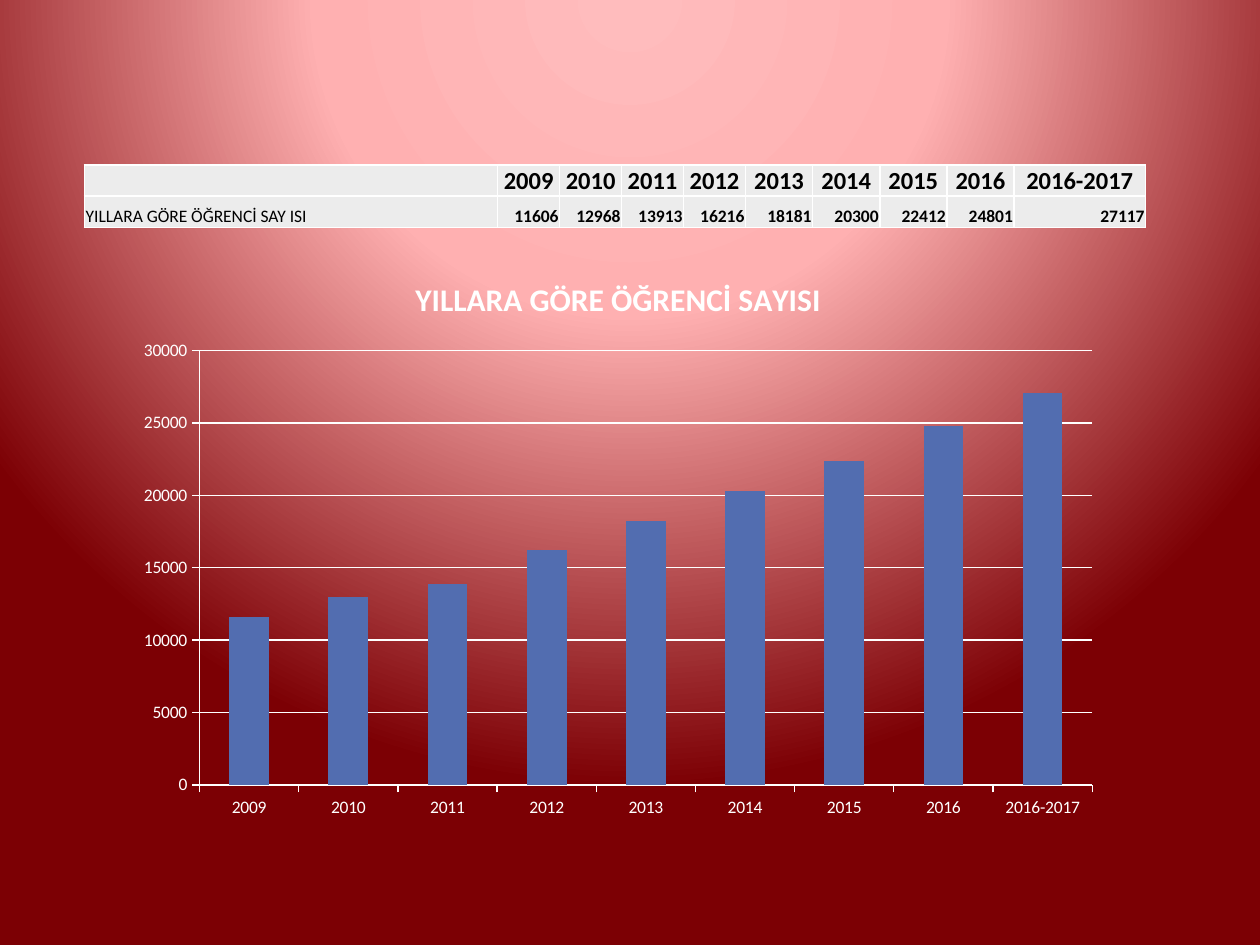
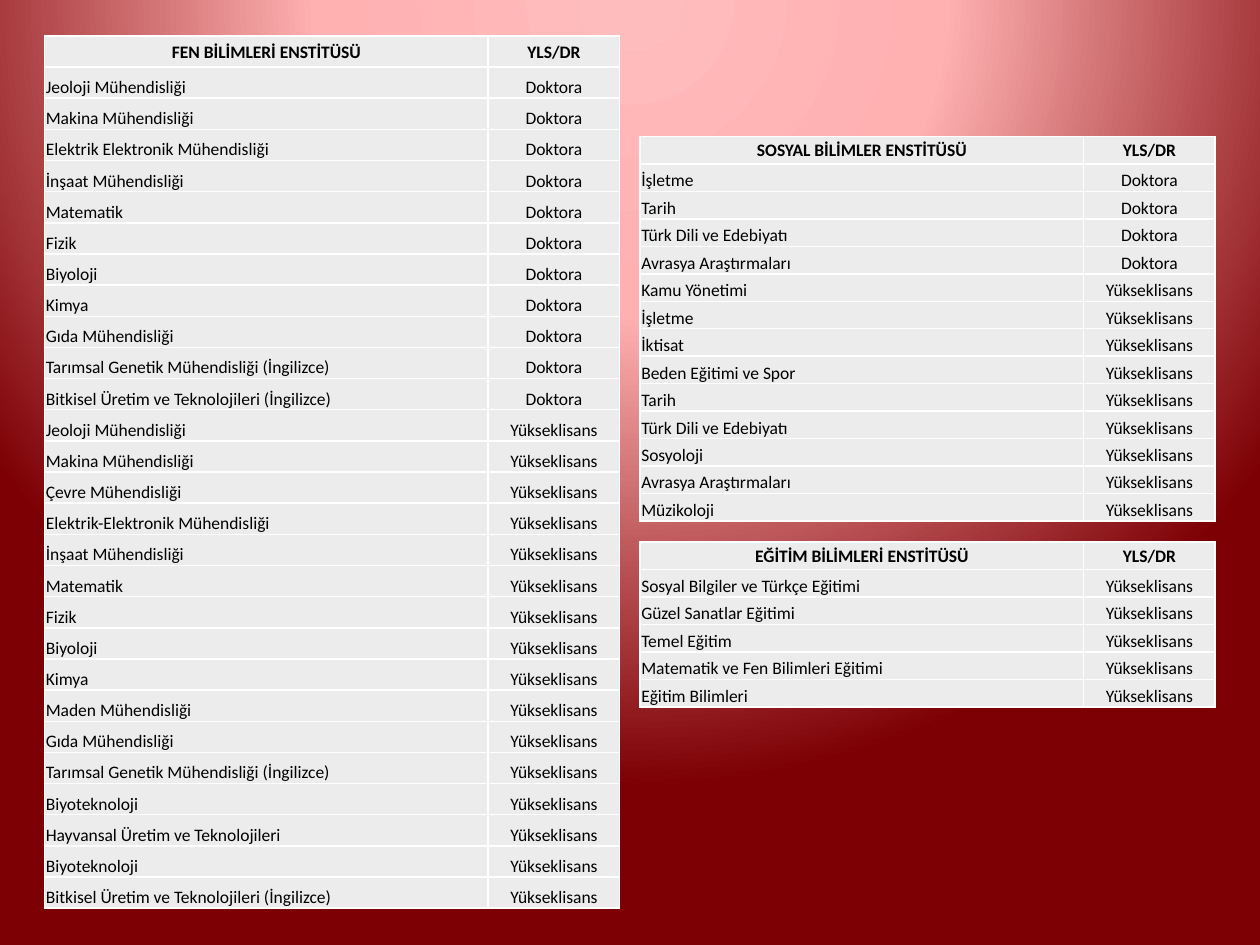
from dataclasses import dataclass

from lxml import etree
from pptx import Presentation, util as u
from pptx.chart.data import CategoryChartData
from pptx.dml.color import RGBColor
from pptx.enum import chart as ch, text as tx
from pptx.oxml import ns, parse_xml

FONT = "Calibri"
WHITE, BLACK, CELL_GREY, BAR_BLUE = "FFFFFF", "000000", "ECECEC", "526DB0"
BACKDROP = ((0, "FFBCBD"), (40, "FFB0B1"), (100, "7C0004"))
SLIDE_W, SLIDE_H = u.Inches(10), u.Inches(7.5)
LEFT, CENTER, RIGHT = tx.PP_ALIGN.LEFT, tx.PP_ALIGN.CENTER, tx.PP_ALIGN.RIGHT
MIDDLE, BOTTOM = tx.MSO_ANCHOR.MIDDLE, tx.MSO_ANCHOR.BOTTOM


@dataclass(frozen=True)
class CellStyle:
    align: tx.PP_ALIGN = LEFT
    size: int = 10
    bold: bool = False
    anchor: tx.MSO_ANCHOR = BOTTOM


@dataclass(frozen=True)
class Grid:
    """Position, column widths and row height in percent of the slide."""
    left: float
    top: float
    columns: tuple
    row: float


@dataclass(frozen=True)
class Institute:
    name: str
    doctorates: tuple
    masters: tuple
    grid: Grid


# Content
STUDENTS = {
    "2009": 11606, "2010": 12968, "2011": 13913, "2012": 16216, "2013": 18181,
    "2014": 20300, "2015": 22412, "2016": 24801, "2016-2017": 27117,
}
CHART_TITLE = "YILLARA GÖRE ÖĞRENCİ SAYISI"
ROW_LABEL = "YILLARA GÖRE ÖĞRENCİ SAY ISI"
YEAR_GRID = Grid(6.7, 17.47, (32.8, *[4.92] * 4, *[5.33] * 4, 10.45), 3.3)

PROGRAMME_COLUMNS = (35.2, 10.45)
GENETICS = "Tarımsal Genetik Mühendisliği (İngilizce)"
CROPS = "Bitkisel Üretim ve Teknolojileri (İngilizce)"
INSTITUTES = (
    Institute(
        "FEN BİLİMLERİ ENSTİTÜSÜ",
        ("Jeoloji Mühendisliği", "Makina Mühendisliği",
         "Elektrik Elektronik Mühendisliği", "İnşaat Mühendisliği", "Matematik",
         "Fizik", "Biyoloji", "Kimya", "Gıda Mühendisliği", GENETICS, CROPS),
        ("Jeoloji Mühendisliği", "Makina Mühendisliği", "Çevre Mühendisliği",
         "Elektrik-Elektronik Mühendisliği", "İnşaat Mühendisliği", "Matematik",
         "Fizik", "Biyoloji", "Kimya", "Maden Mühendisliği", "Gıda Mühendisliği",
         GENETICS, "Biyoteknoloji", "Hayvansal Üretim ve Teknolojileri",
         "Biyoteknoloji", CROPS),
        Grid(3.54, 3.8, PROGRAMME_COLUMNS, 3.3)),
    Institute(
        "SOSYAL BİLİMLER ENSTİTÜSÜ",
        ("İşletme", "Tarih", "Türk Dili ve Edebiyatı", "Avrasya Araştırmaları"),
        ("Kamu Yönetimi", "İşletme", "İktisat", "Beden Eğitimi ve Spor", "Tarih",
         "Türk Dili ve Edebiyatı", "Sosyoloji", "Avrasya Araştırmaları",
         "Müzikoloji"),
        Grid(50.8, 14.43, PROGRAMME_COLUMNS, 2.91)),
    Institute(
        "EĞİTİM BİLİMLERİ ENSTİTÜSÜ",
        (),
        ("Sosyal Bilgiler ve Türkçe Eğitimi", "Güzel Sanatlar Eğitimi",
         "Temel Eğitim", "Matematik ve Fen Bilimleri Eğitimi", "Eğitim Bilimleri"),
        Grid(50.8, 57.37, PROGRAMME_COLUMNS, 2.91)),
)


def across(percent: float) -> int:
    return round(SLIDE_W * percent / 100)


def down(percent: float) -> int:
    return round(SLIDE_H * percent / 100)


def rgb(hex_colour: str) -> RGBColor:
    return RGBColor.from_string(hex_colour)


def set_font(font, size: int, colour: str, bold: bool = False) -> None:
    font.name, font.size, font.bold = FONT, u.Pt(size), bold
    font.color.rgb = rgb(colour)


# Shared background: a glow from above the slide
def paint_backdrop(master) -> None:
    master.background.fill.gradient()
    gradient = master.element.xpath(".//p:bgPr/a:gradFill")[0]
    stops = "".join(f'<a:gs pos="{pos * 1000}"><a:srgbClr val="{colour}"/></a:gs>'
                    for pos, colour in BACKDROP)
    glow = parse_xml(
        f'<a:gradFill {ns.nsdecls("a")} rotWithShape="1"><a:gsLst>{stops}</a:gsLst>'
        '<a:path path="circle"><a:fillToRect l="50000" t="-80000" r="50000" '
        'b="180000"/></a:path></a:gradFill>')
    gradient.getparent().replace(gradient, glow)


# Tables
def add_borders(cell) -> None:
    properties = cell._tc.get_or_add_tcPr()
    for position, side in enumerate("LRTB"):
        line = etree.Element(ns.qn(f"a:ln{side}"), w=str(u.Pt(1)))
        fill = etree.SubElement(line, ns.qn("a:solidFill"))
        etree.SubElement(fill, ns.qn("a:srgbClr"), val=WHITE)
        properties.insert(position, line)


def fill_cell(cell, content: str, style: CellStyle) -> None:
    cell.fill.solid()
    cell.fill.fore_color.rgb = rgb(CELL_GREY)
    add_borders(cell)
    cell.margin_left = cell.margin_right = cell.margin_top = u.Inches(0.01)
    cell.margin_bottom = 0
    cell.vertical_anchor = style.anchor
    cell.text = content
    paragraph = cell.text_frame.paragraphs[0]
    paragraph.alignment = style.align
    set_font(paragraph.font, style.size, BLACK, style.bold)


def draw_table(slide, grid: Grid, rows: list, styles: list) -> None:
    """Each row of styles pairs with a row of text: first column, then the rest."""
    table = slide.shapes.add_table(
        len(rows), len(grid.columns), across(grid.left), down(grid.top),
        across(sum(grid.columns)), down(grid.row * len(rows))).table
    table.first_row = table.horz_banding = False
    for column, width in zip(table.columns, grid.columns):
        column.width = across(width)
    for table_row, contents, (first, rest) in zip(table.rows, rows, styles):
        table_row.height = down(grid.row)
        for index, (cell, content) in enumerate(zip(table_row.cells, contents)):
            fill_cell(cell, content, rest if index else first)


def draw_institute(slide, institute: Institute) -> None:
    rows = [(institute.name, "YLS/DR")]
    rows += [(name, "Doktora") for name in institute.doctorates]
    rows += [(name, "Yükseklisans") for name in institute.masters]
    heading = CellStyle(CENTER, bold=True, anchor=MIDDLE)
    body = (CellStyle(), CellStyle(CENTER))
    draw_table(slide, institute.grid, rows,
               [(heading, heading)] + [body] * (len(rows) - 1))


# Chart, with the counts rounded to hundreds
def draw_student_chart(slide) -> None:
    data = CategoryChartData()
    data.categories = list(STUDENTS)
    data.add_series(CHART_TITLE, [round(count, -2) for count in STUDENTS.values()])
    chart = slide.shapes.add_chart(
        ch.XL_CHART_TYPE.COLUMN_CLUSTERED, across(9.85), down(26.88),
        across(78.4), down(60.8), data).chart
    set_font(chart.font, 10, WHITE)
    chart.has_legend = False
    chart.has_title = True
    title = chart.chart_title.text_frame
    title.text = CHART_TITLE
    set_font(title.paragraphs[0].font, 18, WHITE, bold=True)

    plot = chart.plots[0]
    plot.gap_width, plot.vary_by_categories = 150, False
    bars = plot.series[0].format.fill
    bars.solid()
    bars.fore_color.rgb = rgb(BAR_BLUE)

    values = chart.value_axis
    values.minimum_scale, values.maximum_scale, values.major_unit = 0, 30000, 5000
    values.has_major_gridlines = True
    for axis in (chart.category_axis, values):
        axis.major_tick_mark = ch.XL_TICK_MARK.OUTSIDE
    for part in (chart.category_axis, values, values.major_gridlines):
        part.format.line.color.rgb = rgb(WHITE)
        part.format.line.width = u.Pt(0.75)


def main() -> None:
    deck = Presentation()
    deck.slide_width, deck.slide_height = SLIDE_W, SLIDE_H
    paint_backdrop(deck.slide_master)
    blank = deck.slide_layouts.get_by_name("Blank")

    # Students by year
    students = deck.slides.add_slide(blank)
    year = CellStyle(CENTER, 14, True)
    draw_table(students, YEAR_GRID,
               [("", *STUDENTS), (ROW_LABEL, *map(str, STUDENTS.values()))],
               [(CellStyle(), year), (CellStyle(), CellStyle(RIGHT, bold=True))])
    draw_student_chart(students)

    # Graduate programmes by institute
    programmes = deck.slides.add_slide(blank)
    for institute in INSTITUTES:
        draw_institute(programmes, institute)

    deck.save("out.pptx")


if __name__ == "__main__":
    main()
